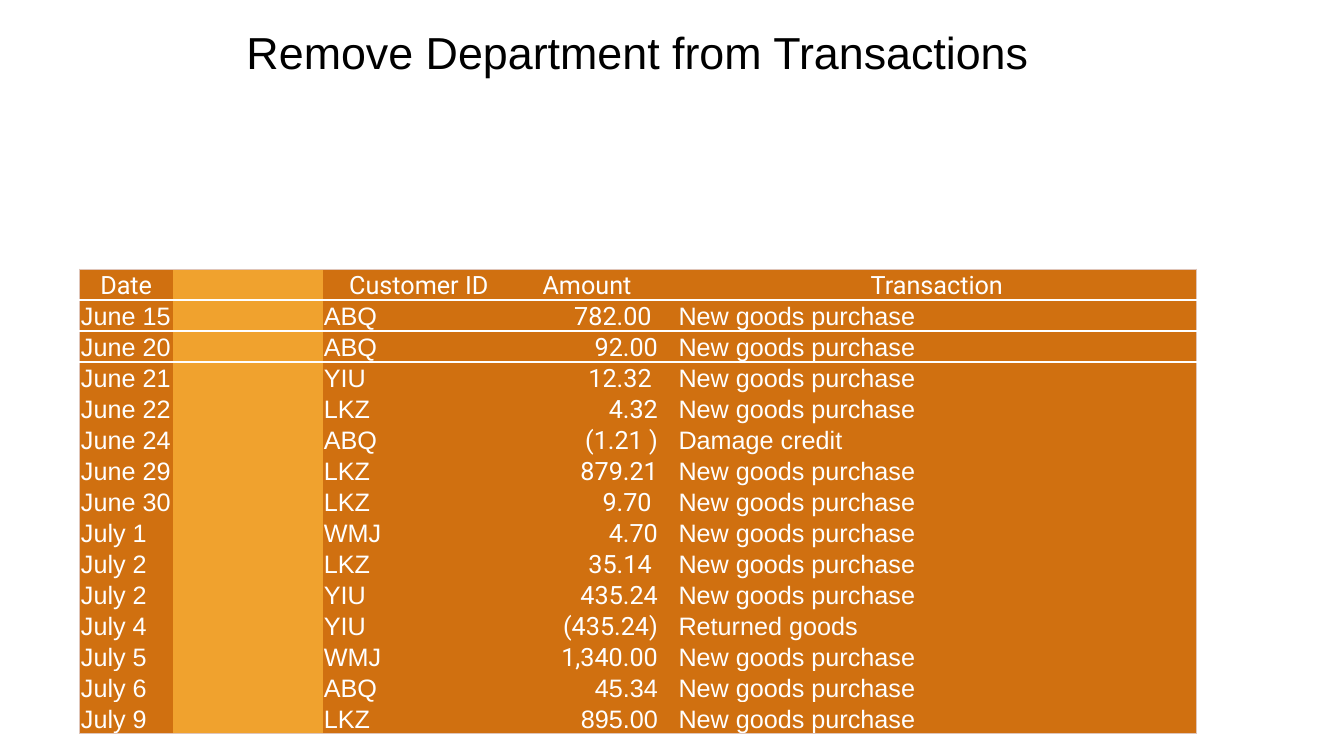
import pptx
import pptx.util
import pptx.dml.color
import pptx.enum.text
import pptx.oxml
import pptx.oxml.ns

Cm, Pt = pptx.util.Cm, pptx.util.Pt
ALIGN = pptx.enum.text.PP_ALIGN
ANCHOR = pptx.enum.text.MSO_ANCHOR

# Content
TITLE = "Remove Department from Transactions"
HEAD = ("Date", "", "Customer ID", "Amount", "", "Transaction")
BUY = "New goods purchase"
SALES = [
    ("June 15", "ABQ", "782.00 ", BUY),
    ("June 20", "ABQ", "92.00", BUY),
    ("June 21", "YIU", "12.32 ", BUY),
    ("June 22", "LKZ", "4.32", BUY),
    ("June 24", "ABQ", "(1.21 )", "Damage credit"),
    ("June 29", "LKZ", "879.21", BUY),
    ("June 30", "LKZ", "9.70 ", BUY),
    ("July 1", "WMJ", "4.70", BUY),
    ("July 2", "LKZ", "35.14 ", BUY),
    ("July 2", "YIU", "435.24", BUY),
    ("July 4", "YIU", "(435.24)", "Returned goods"),
    ("July 5", "WMJ", "1,340.00", BUY),
    ("July 6", "ABQ", "45.34", BUY),
    ("July 9", "LKZ", "895.00", BUY),
]
ROWS = [HEAD] + [(day, "", buyer, sum_, "", deal)
                 for day, buyer, sum_, deal in SALES]
WIDTHS = (2.34, 3.78, 4.85, 3.63, 0.46, 13.08)
TALL = 0.78
GAP, AMOUNT = 1, 3
ARIAL_FROM = 13  # amounts from this row on are in Arial
BROWN, GOLD, WHITE, EDGE = "D07010", "F0A22E", "FFFFFF", "DFC5B9"
PLAIN = "{2D5ABB26-0587-4C30-8999-92F81FD0307C}"


def color(code):
    return pptx.dml.color.RGBColor.from_string(code)


def border(cell, sides):
    """Put lines, keyed L, R, T, B, ahead of the cell's fill."""
    props = cell._tc.get_or_add_tcPr()
    for i, side in enumerate(s for s in "LRTB" if s in sides):
        code, width = sides[side]
        props.insert(i, pptx.oxml.parse_xml(
            f'<a:ln{side} {pptx.oxml.ns.nsdecls("a")} w="{Pt(width)}">'
            f'<a:solidFill><a:srgbClr val="{code}"/></a:solidFill>'
            f'</a:ln{side}>'))


def style(par, size, font, code, align):
    par.font.size = Pt(size)
    par.font.name = font
    par.font.color.rgb = color(code)
    par.alignment = align
    par.line_spacing = 0.9


deck = pptx.Presentation()
deck.slide_width, deck.slide_height = Cm(33.87), Cm(19.05)
slide = deck.slides.add_slide(deck.slide_layouts[5])

# Title
title = slide.shapes.title
title.left, title.top = Cm(5.89), Cm(0.64)
title.width, title.height = Cm(20.37), Cm(1.5)
frame = title.text_frame
frame.text = TITLE
frame.word_wrap = False
frame.vertical_anchor = ANCHOR.MIDDLE
style(frame.paragraphs[0], 32, "Arial", "000000", ALIGN.CENTER)

# Table
grid = slide.shapes.add_table(
    len(ROWS), len(WIDTHS), Cm(2.01), Cm(6.78),
    Cm(sum(WIDTHS)), Cm(TALL * len(ROWS))).table
grid._tbl.tblPr.find(pptx.oxml.ns.qn("a:tableStyleId")).text = PLAIN
grid.first_row = grid.horz_banding = False
for col, wide in zip(grid.columns, WIDTHS):
    col.width = Cm(wide)

last_row, last_col = len(ROWS) - 1, len(WIDTHS) - 1
for r, row in enumerate(ROWS):
    grid.rows[r].height = Cm(TALL)
    for c, text in enumerate(row):
        cell = grid.cell(r, c)
        cell.text = text
        cell.vertical_anchor = ANCHOR.BOTTOM
        cell.margin_left = cell.margin_right = cell.margin_top = Cm(0.03)
        cell.margin_bottom = 0
        cell.fill.solid()
        cell.fill.fore_color.rgb = color(GOLD if c == GAP else BROWN)

        roboto = r == 0 or (c == AMOUNT and r < ARIAL_FROM)
        align = (ALIGN.CENTER if r == 0 else
                 ALIGN.RIGHT if c == AMOUNT else ALIGN.LEFT)
        style(cell.text_frame.paragraphs[0], 18,
              "Roboto" if roboto else "Arial", WHITE, align)

        # Outer frame, and white rules under the first two rows
        sides = {}
        if c == 0:
            sides["L"] = (EDGE, 0.75)
        if c == last_col:
            sides["R"] = (EDGE, 0.75)
        if r == 0:
            sides["T"] = (EDGE, 0.75)
        elif r <= 2:
            sides["T"] = (WHITE, 1)
        if r <= 1:
            sides["B"] = (WHITE, 1)
        elif r == last_row:
            sides["B"] = (EDGE, 0.75)
        border(cell, sides)

deck.save("out.pptx")
